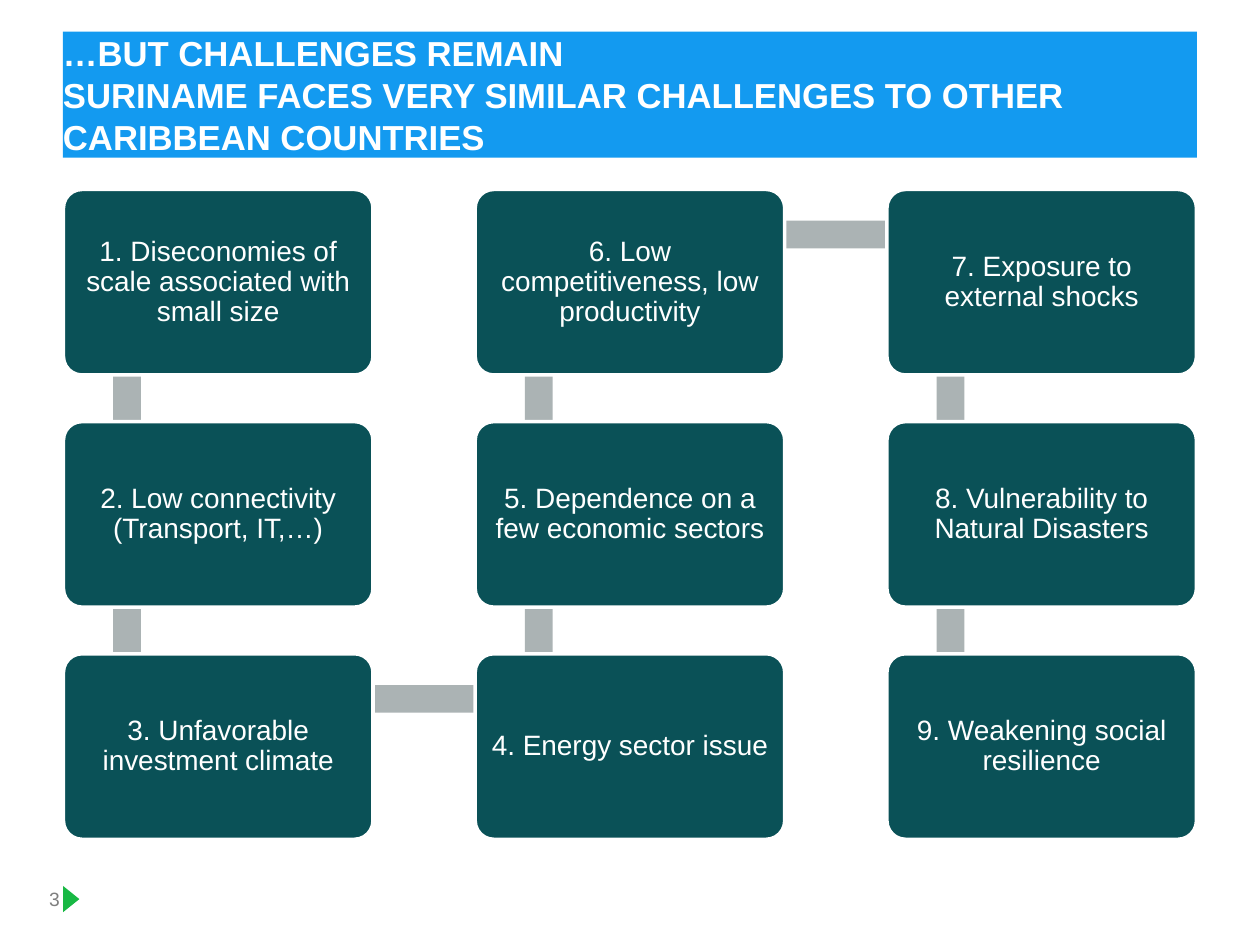
from pptx import Presentation
from pptx.dml.color import RGBColor
from pptx.enum.shapes import MSO_SHAPE
from pptx.enum.text import MSO_ANCHOR, PP_ALIGN
from pptx.util import Cm, Pt

WHITE = RGBColor(0xFF, 0xFF, 0xFF)
BLUE = RGBColor(0x13, 0x9A, 0xF0)
TEAL = RGBColor(0x0A, 0x51, 0x57)
SILVER = RGBColor(0xAB, 0xB3, 0xB4)
GREEN = RGBColor(0x18, 0xB8, 0x44)
GRAY = RGBColor(0x7F, 0x7F, 0x7F)

GRID_LEFT, GRID_TOP = 1.28, 3.82
COLUMN_STEP, ROW_STEP = 8.3, 4.68
BOX_WIDTH, BOX_HEIGHT = 6.24, 3.74
LINK_THICKNESS = 0.56

CHALLENGES = [
    "1. Diseconomies of scale associated with small size",
    "2. Low connectivity (Transport, IT,…)",
    "3. Unfavorable investment climate",
    "4. Energy sector issue",
    "5. Dependence on a few economic sectors",
    "6. Low competitiveness, low productivity",
    "7. Exposure to external shocks",
    "8. Vulnerability to Natural Disasters",
    "9. Weakening social resilience",
]


def write_text(shape, text, *, size, color=WHITE, bold=False,
               align=PP_ALIGN.LEFT, inset=0, line_spacing=None):
    frame = shape.text_frame
    frame.word_wrap = True
    frame.vertical_anchor = MSO_ANCHOR.MIDDLE
    frame.margin_left = frame.margin_right = Cm(inset)
    frame.margin_top = frame.margin_bottom = Cm(inset)
    paragraph = frame.paragraphs[0]
    paragraph.text = text
    paragraph.alignment = align
    paragraph.line_spacing = line_spacing
    for run in paragraph.runs:
        run.font.name = "Arial"
        run.font.size = Pt(size)
        run.font.bold = bold
        run.font.color.rgb = color


def add_filled(slide, kind, left, top, width, height, fill, rotation=0):
    shape = slide.shapes.add_shape(kind, Cm(left), Cm(top), Cm(width), Cm(height))
    shape.shadow.inherit = False
    shape.fill.solid()
    shape.fill.fore_color.rgb = fill
    shape.line.fill.background()
    shape.rotation = rotation
    return shape


def add_link(slide, center_x, center_y, length, rotation=0):
    add_filled(slide, MSO_SHAPE.RECTANGLE, center_x - length / 2,
               center_y - LINK_THICKNESS / 2, length, LINK_THICKNESS, SILVER, rotation)


def add_challenge(slide, text, left, top):
    box = add_filled(slide, MSO_SHAPE.ROUNDED_RECTANGLE, left, top,
                     BOX_WIDTH, BOX_HEIGHT, TEAL)
    box.adjustments[0] = 0.1
    box.line.color.rgb = WHITE
    box.line.width = Pt(2)
    write_text(box, text, size=16, align=PP_ALIGN.CENTER, inset=0.18, line_spacing=0.9)


def snake_position(index):
    column, step = divmod(index, 3)
    row = 2 - step if column % 2 else step
    return GRID_LEFT + column * COLUMN_STEP, GRID_TOP + row * ROW_STEP


def add_snake(slide):
    positions = [snake_position(index) for index in range(len(CHALLENGES))]
    for (left, top), (next_left, next_top) in zip(positions, positions[1:]):
        if left == next_left:
            rotation = 90 if next_top > top else 270
            add_link(slide, left + 1.28, min(top, next_top) + 3.28, 4.65, rotation)
        else:
            add_link(slide, left + 5.43, top + 0.91, 8.28)
    for text, (left, top) in zip(CHALLENGES, positions):
        add_challenge(slide, text, left, top)


def add_page_number(slide):
    add_filled(slide, MSO_SHAPE.ISOSCELES_TRIANGLE, 1.17, 17.96, 0.53, 0.33, GREEN, 90)
    number = slide.shapes.add_textbox(Cm(0.99), Cm(17.63), Cm(1.52), Cm(0.99))
    write_text(number, "3", size=11, color=GRAY)


def main():
    presentation = Presentation()
    presentation.slide_width, presentation.slide_height = Cm(25.4), Cm(19.05)
    slide = presentation.slides.add_slide(presentation.slide_layouts[6])
    title = add_filled(slide, MSO_SHAPE.RECTANGLE, 1.27, 0.64, 22.86, 2.54, BLUE)
    write_text(title, "…BUT CHALLENGES REMAIN\vSURINAME FACES VERY SIMILAR "
               "CHALLENGES TO OTHER CARIBBEAN COUNTRIES", size=19.8, bold=True)
    add_snake(slide)
    add_page_number(slide)
    presentation.save("out.pptx")


if __name__ == "__main__":
    main()
